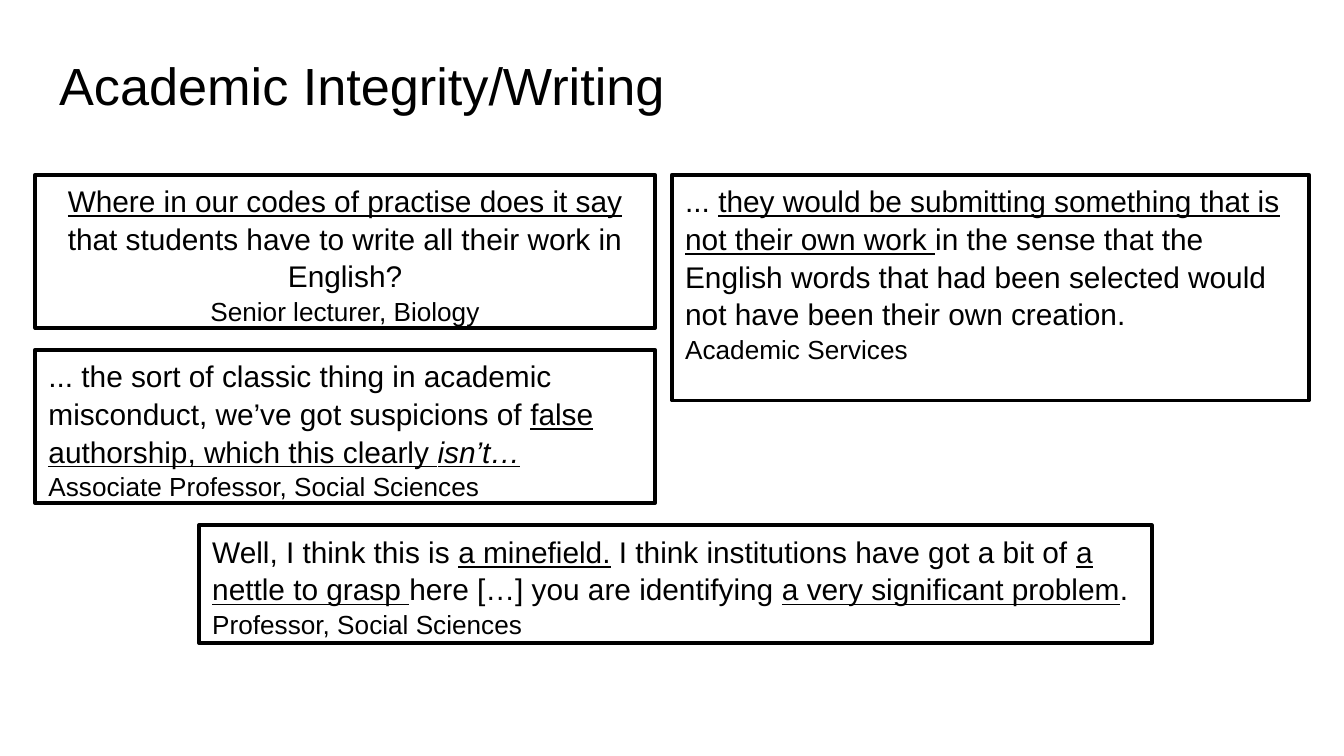
from pptx import Presentation
from pptx.dml.color import RGBColor
from pptx.enum.shapes import MSO_SHAPE as Shape
from pptx.enum.text import MSO_ANCHOR as Anchor, PP_ALIGN as Align
from pptx.util import Pt

BLACK = RGBColor(0, 0, 0)
WHITE = RGBColor(255, 255, 255)

deck = Presentation()
deck.slide_width, deck.slide_height = Pt(720), Pt(405)
slide = deck.slides.add_slide(deck.slide_layouts[5])


def style(par, size, align):
    par.alignment = align
    par.font.name = "Arial"
    par.font.size = Pt(size)
    par.font.color.rgb = BLACK


title = slide.shapes.title
title.left, title.top, title.width, title.height = Pt(24.5), Pt(17.3), Pt(671), Pt(45.4)
frame = title.text_frame
frame.text = "Academic Integrity/Writing"
frame.vertical_anchor = Anchor.TOP
frame.margin_left = frame.margin_right = Pt(7.2)
frame.margin_top, frame.margin_bottom = Pt(11), Pt(0)
style(frame.paragraphs[0], 28, Align.LEFT)

LEFT, TOP, WIDE, HIGH = 18.9, 93.6, 332, 82.2
quotes = [
    (LEFT, TOP, WIDE, HIGH, Align.CENTER, "Senior lecturer, Biology", [
        ("Where in our codes of practise does it say ", "u"),
        ("that students have to write all their work in English?", "")]),
    (LEFT, TOP + 93.8, WIDE, HIGH, Align.LEFT, "Associate Professor, Social Sciences", [
        ("... the sort of classic thing in academic misconduct, we’ve got suspicions of ", ""),
        ("false authorship, which this clearly ", "u"),
        ("isn’t…", "ui")]),
    (106.6, 281.4, 510.5, 63.2, Align.LEFT, "Professor, Social Sciences", [
        ("Well, I think this is ", ""),
        ("a minefield.", "u"),
        (" I think institutions have got a bit of ", ""),
        ("a nettle to grasp ", "u"),
        ("here […] you are identifying ", ""),
        ("a very significant problem", "u"),
        (".", "")]),
    (360, TOP, 341.3, 121, Align.LEFT, "Academic Services", [
        ("... ", ""),
        ("they would be submitting something that is not their own work ", "u"),
        ("in the sense that the English words that had been selected would "
         "not have been their own creation.", "")]),
]

for left, top, wide, high, align, source, parts in quotes:
    box = slide.shapes.add_shape(Shape.RECTANGLE, Pt(left), Pt(top), Pt(wide), Pt(high))
    box.shadow.inherit = False
    box.fill.solid()
    box.fill.fore_color.rgb = WHITE
    box.line.color.rgb = BLACK
    box.line.width = Pt(2)
    frame = box.text_frame
    frame.word_wrap = True
    frame.vertical_anchor = Anchor.TOP
    quote, credit = frame.paragraphs[0], frame.add_paragraph()
    for text, marks in parts:
        run = quote.add_run()
        run.text = text
        if "u" in marks:
            run.font.underline = True
        if "i" in marks:
            run.font.italic = True
    credit.text = source
    for par, size in ((quote, 16), (credit, 14)):
        style(par, size, align)
        par.line_spacing = 1.05

deck.save("out.pptx")
